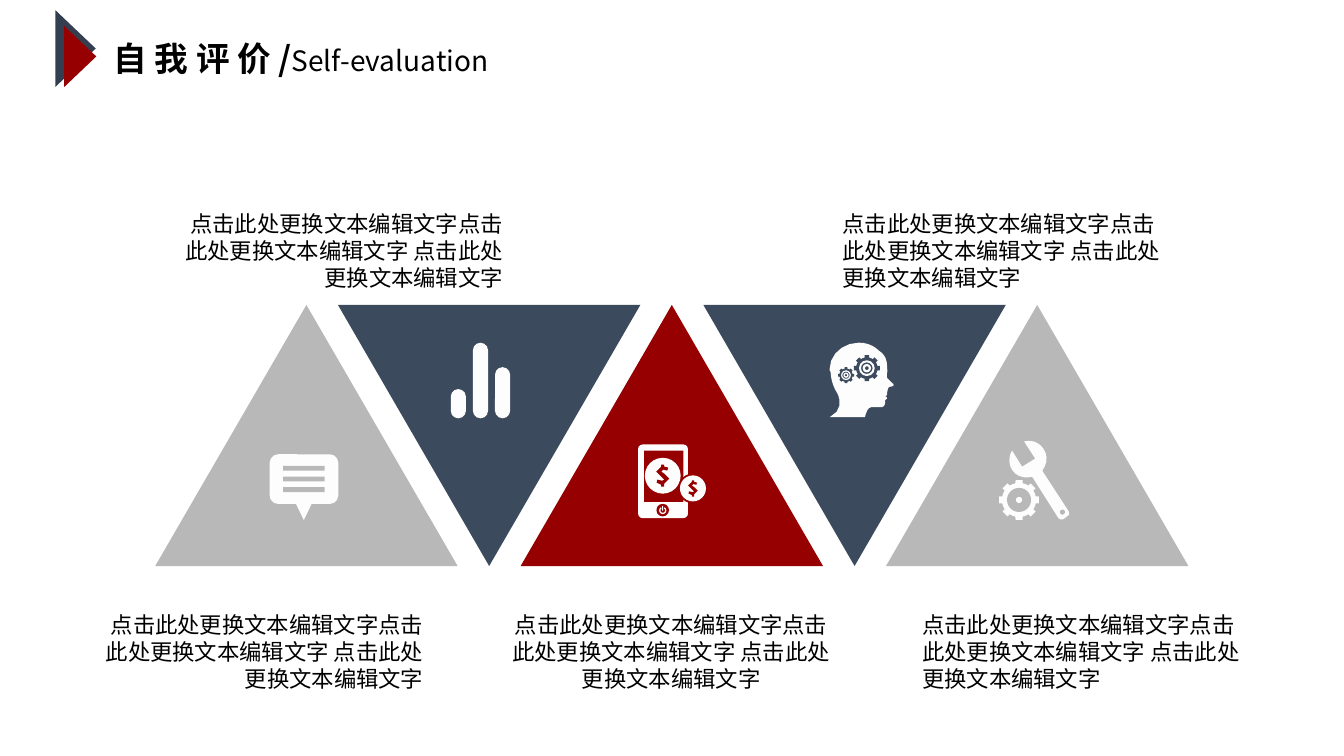
from math import cos, radians, sin

from lxml import etree
from pptx import Presentation
from pptx.dml.color import RGBColor
from pptx.enum.shapes import MSO_SHAPE
from pptx.enum.text import MSO_AUTO_SIZE, PP_ALIGN
from pptx.oxml.ns import qn
from pptx.util import Pt

TRIANGLE, RECT, ROUNDED = MSO_SHAPE.ISOSCELES_TRIANGLE, MSO_SHAPE.RECTANGLE, MSO_SHAPE.ROUNDED_RECTANGLE
OVAL, DONUT, BLOCK_ARC = MSO_SHAPE.OVAL, MSO_SHAPE.DONUT, MSO_SHAPE.BLOCK_ARC
LEFT, CENTER, RIGHT = PP_ALIGN.LEFT, PP_ALIGN.CENTER, PP_ALIGN.RIGHT
GROW = MSO_AUTO_SIZE.SHAPE_TO_FIT_TEXT

NAVY = RGBColor(0x33, 0x3F, 0x50)
SLATE = RGBColor(0x3C, 0x4A, 0x5E)
RED = RGBColor(0x96, 0x00, 0x00)
GREY = RGBColor(0xB8, 0xB8, 0xB8)
ICON = RGBColor(0xFD, 0xFD, 0xFD)
BLACK = RGBColor(0x00, 0x00, 0x00)
FONT = "Noto Sans CJK SC"
UNIT = 0.72  # points per outline unit

# Outlines: a pair is a line end, six numbers are a Bezier curve
DOLLAR = [(1.5, 8), (1.5, 11), (-1.5, 11), (-1.5, 9), (-6, 7), (-5.5, 4), (-0.5, 5),
          (1.5, 4), (-1.5, 1), (-6.5, -4), (-1.5, -9), (-1.5, -11), (1.5, -11),
          (1.5, -9), (5.5, -8), (4.5, -5), (0.5, -6), (-1.5, -4), (1.5, -2), (6.5, 3)]
HEAD = [(62, 40), (61, 39, 59, 37, 57, 35), (56, 32, 58, 29, 57, 25),
        (57, 23, 57, 20, 56, 17), (55, 13, 52, 10, 49, 8), (44, 3, 37, 0, 29, 0),
        (13, 0, 0, 12, 0, 26), (0, 27, 0, 28, 1, 29), (1, 35, 3, 43, 8, 51),
        (8, 51, 16, 66, 0, 74), (35, 74), (35, 74, 37, 64, 41, 64), (52, 64),
        (56, 63, 55, 57, 55, 57), (56, 56, 57, 56, 57, 55), (57, 54, 56, 53, 53, 53),
        (55, 53), (56, 53, 57, 52, 57, 51), (57, 50), (57, 49, 58, 44, 59, 44),
        (67, 43, 62, 40, 62, 40)]
WRENCH = [(60, 71), (34, 31), (39, 24, 40, 16, 35, 9), (31, 3, 24, 0, 16, 2), (27, 19),
          (14, 27), (4, 11), (1, 16, 0, 24, 4, 30), (8, 37, 17, 39, 24, 37), (50, 78),
          (51, 79, 53, 80, 55, 79), (59, 76), (61, 75, 61, 73, 60, 71)]


class Painter:
    def __init__(self, slide):
        self.shapes = slide.shapes

    def paint(self, shape, color):
        shape.shadow.inherit = False
        shape.fill.solid()
        shape.fill.fore_color.rgb = color
        shape.line.fill.background()

    def shape(self, kind, color, left, top, width, height, adjust=(), rotation=0):
        shape = self.shapes.add_shape(kind, Pt(left), Pt(top), Pt(width), Pt(height))
        for index, value in enumerate(adjust):
            shape.adjustments[index] = value
        shape.rotation = rotation
        self.paint(shape, color)

    def disc(self, color, x, y, radius, kind=OVAL, adjust=()):
        self.shape(kind, color, x - radius, y - radius, 2 * radius, 2 * radius, adjust)

    def outline(self, color, x, y, steps, scale=UNIT):
        points = [steps[0]]
        for step in steps[1:]:
            if len(step) == 2:
                points.append(step)
                continue
            curve = points[-1] + step
            for t in (0.2, 0.4, 0.6, 0.8, 1):
                weights = ((1 - t) ** 3, 3 * t * (1 - t) ** 2, 3 * t * t * (1 - t), t ** 3)
                points.append(tuple(sum(w * c for w, c in zip(weights, curve[axis::2]))
                                    for axis in (0, 1)))
        placed = [(Pt(x + px * scale), Pt(y + py * scale)) for px, py in points]
        builder = self.shapes.build_freeform(*placed[0])
        builder.add_line_segments(placed[1:], close=True)
        self.paint(builder.convert_to_shape(), color)

    def gear(self, color, x, y, tip, body):
        corners = [(body, -12), (tip, -10), (tip, 10), (body, 12), (body, 22.5)]
        rim = [(r * cos(radians(tooth + a)), r * sin(radians(tooth + a)))
               for tooth in range(0, 360, 45) for r, a in corners]
        self.outline(color, x, y, rim, 1)

    def coin(self, x, y, radius):
        self.disc(ICON, x, y, radius)
        self.outline(RED, x, y, DOLLAR, radius / 17.8)

    def text(self, left, top, width, height, runs, line, align=LEFT):
        box = self.shapes.add_textbox(Pt(left), Pt(top), Pt(width), Pt(height))
        frame = box.text_frame
        frame.word_wrap = True
        frame.auto_size = GROW
        paragraph = frame.paragraphs[0]
        paragraph.alignment = align
        paragraph.line_spacing = Pt(line)
        for words, size, bold in runs:
            run = paragraph.add_run()
            run.text = words
            run.font.size = Pt(size)
            run.font.bold = bold
            run.font.color.rgb = BLACK
            run.font.name = FONT
            etree.SubElement(run._r.get_or_add_rPr(), qn("a:ea"), typeface=FONT)


def main():
    deck = Presentation()
    deck.slide_width, deck.slide_height = Pt(960), Pt(540)
    painter = Painter(deck.slides.add_slide(deck.slide_layouts[6]))

    # Title
    painter.shape(TRIANGLE, NAVY, 26.64, 20.3, 54.72, 28.8, rotation=90)
    painter.shape(TRIANGLE, RED, 35.28, 28.8, 43.92, 23.04, rotation=90)
    painter.text(74.16, 23.5, 447, 36,
                 [("自 我 评 价 /", 24, True), ("Self-evaluation", 20, False)], 28.8)

    # Row of triangles, every second one upside down
    for index, color in enumerate((GREY, SLATE, RED, SLATE, GREY)):
        painter.shape(TRIANGLE, color, 110.9 + 130.5 * index, 217.8, 216, 186.5,
                      rotation=180 * (index % 2))

    # Speech bubble
    painter.shape(TRIANGLE, ICON, 210.5, 358, 13, 13.5, rotation=180)
    painter.shape(ROUNDED, ICON, 192.6, 324.5, 49, 35.5, (0.17,))
    for row in range(3):
        painter.shape(RECT, GREY, 202.3, 332.8 + 7.6 * row, 29.7, 3.5)

    # Bars
    for index, height in enumerate((20.9, 54, 36.5)):
        painter.shape(ROUNDED, ICON, 322 + 15.8 * index, 298.8 - height, 10.8, height, (0.5,))

    # Phone with coins
    painter.shape(ROUNDED, ICON, 455.8, 317.5, 35.6, 52.6, (0.09,))
    painter.shape(RECT, RED, 460.1, 321.8, 28.1, 36.7)
    painter.coin(473.4, 339.8, 12.8)
    painter.disc(RED, 495, 348.9, 10.7)
    painter.coin(495, 348.9, 9.3)
    painter.disc(RED, 473.4, 364.4, 4.5)
    painter.disc(ICON, 473.4, 364.6, 2.6, BLOCK_ARC, (180, 144, 0.18))
    painter.shape(RECT, ICON, 473, 361.4, 0.8, 3.4)

    # Head with gears
    painter.outline(ICON, 592.6, 244.8, HEAD)
    for x, y, size in ((619.2, 263, 9.4), (604.3, 268, 5.8)):
        painter.gear(SLATE, x, y, size, size * 0.82)
        painter.disc(ICON, x, y, size * 0.6, DONUT, (0.13,))
        painter.disc(ICON, x, y, size * 0.32, DONUT, (0.27,))

    # Wrench and gear
    painter.outline(ICON, 720, 313.9, WRENCH)
    painter.disc(GREY, 758.9, 365.8, 1.8)
    painter.gear(ICON, 727.9, 357.1, 14.4, 12.2)
    painter.disc(GREY, 727.9, 357.1, 8.6)
    painter.disc(ICON, 727.9, 357.1, 2.2)

    # Captions
    caption = "点击此处更换文本编辑文字点击此处更换文本编辑文字 点击此处更换文本编辑文字"
    above, below = 146.2, 432.7
    for left, top, align in ((114.5, above, RIGHT), (594.7, above, LEFT), (353.5, below, CENTER),
                             (57.6, below, RIGHT), (651.6, below, LEFT)):
        painter.text(left, top, 252, 65.5, [(caption, 16, False)], 19.35, align)

    deck.save("out.pptx")


if __name__ == "__main__":
    main()
